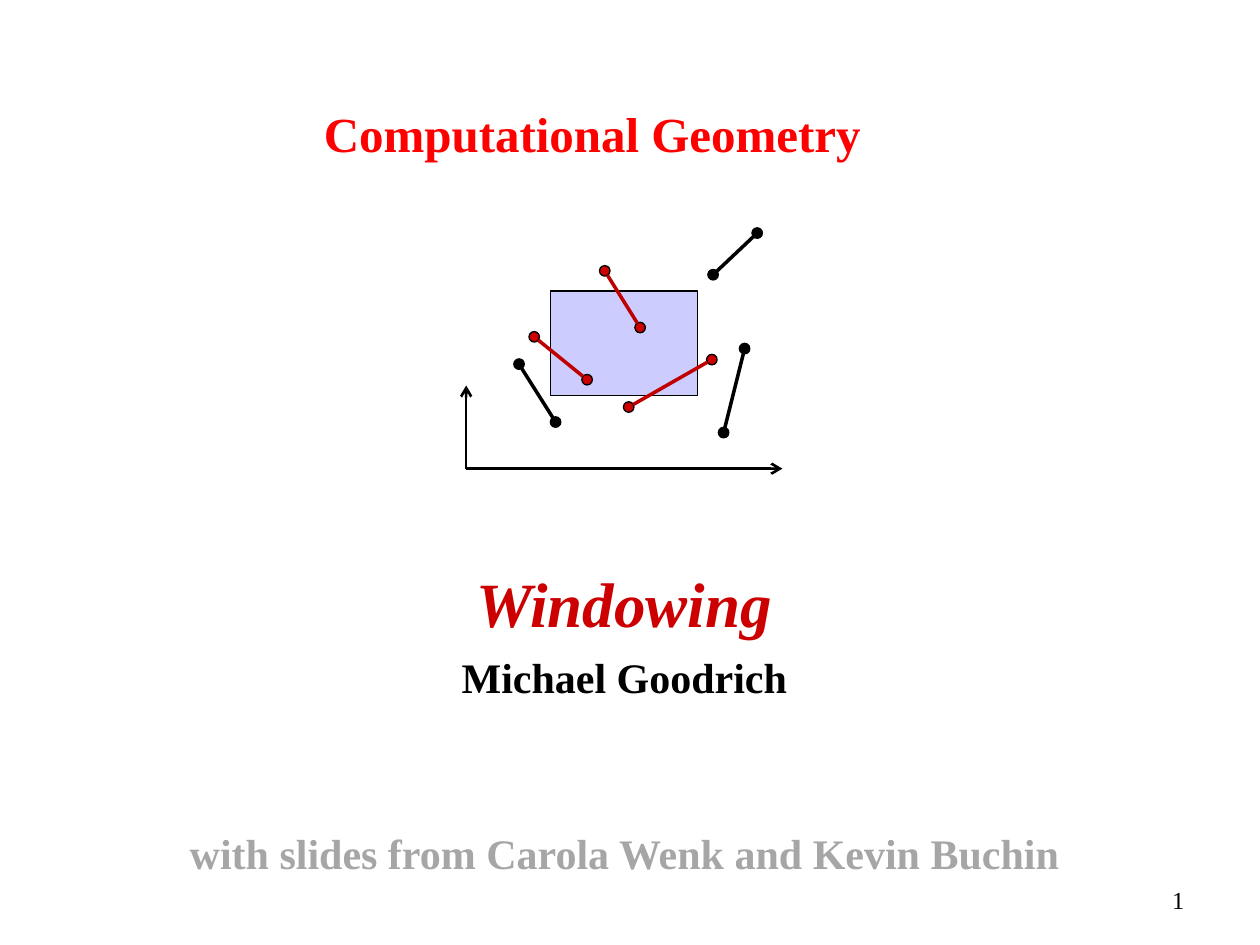
import pptx
import pptx.util
import pptx.dml.color
import pptx.enum.shapes
import pptx.enum.text
import math
from dataclasses import dataclass
from lxml import etree
from pptx.oxml.ns import qn

Pt = pptx.util.Pt
Kind = pptx.enum.shapes.MSO_SHAPE
Align = pptx.enum.text.PP_ALIGN
Anchor = pptx.enum.text.MSO_ANCHOR


@dataclass
class Theme:
    font: str = "Times New Roman"
    title: str = "FF0000"
    topic: str = "CC0000"
    black: str = "000000"
    grey: str = "A6A6A6"
    hit: str = "C00000"
    pane: str = "CCCCFF"
    big: float = 36
    head: float = 28
    body: float = 24
    note: float = 14
    dot: float = 6
    thin: float = 0.75
    axis: float = 1.5
    bold: float = 2


def rgb(code):
    return pptx.dml.color.RGBColor.from_string(code)


class Deck:
    def __init__(self, theme):
        self.theme = theme
        self.show = pptx.Presentation()
        self.show.slide_width, self.show.slide_height = Pt(720), Pt(540)
        self.slide = self.show.slides.add_slide(self.show.slide_layouts[6])

    def text(self, box, rows, align=Align.CENTER, anchor=Anchor.TOP, wrap=True):
        """Each row is (words, size, colour, bold, italic, space before)."""
        shape = self.slide.shapes.add_textbox(*map(Pt, box))
        frame = shape.text_frame
        frame.word_wrap = wrap
        frame.vertical_anchor = anchor
        frame.text = "\n".join(row[0] for row in rows)
        for para, (_, size, color, bold, slant, gap) in zip(frame.paragraphs, rows):
            para.alignment = align
            para.line_spacing = 0.9
            para.space_before = Pt(gap)
            font = para.runs[0].font
            font.name, font.size = self.theme.font, Pt(size)
            font.bold, font.italic = bold, slant
            font.color.rgb = rgb(color)

    def shape(self, kind, box, fill):
        shape = self.slide.shapes.add_shape(kind, *map(Pt, box))
        shape.shadow.inherit = False
        shape.fill.solid()
        shape.fill.fore_color.rgb = rgb(fill)
        shape.line.color.rgb = rgb(self.theme.black)
        shape.line.width = Pt(self.theme.thin)

    def line(self, start, end, color, width, arrow=False):
        kind = pptx.enum.shapes.MSO_CONNECTOR.STRAIGHT
        line = self.slide.shapes.add_connector(kind, *map(Pt, (*start, *end)))
        line.line.color.rgb = rgb(color)
        line.line.width = Pt(width)
        if arrow:
            etree.SubElement(line.line._get_or_add_ln(), qn("a:tailEnd"), type="arrow")
        etree.SubElement(line._element.spPr, qn("a:effectLst"))

    def segment(self, start, end, fill, color):
        """Two dots joined by a line that runs from rim to rim."""
        size = self.theme.dot
        for x, y in (start, end):
            self.shape(Kind.OVAL, (x - size / 2, y - size / 2, size, size), fill)
        part = size / 2 / math.dist(start, end)
        dx, dy = ((b - a) * part for a, b in zip(start, end))
        self.line((start[0] + dx, start[1] + dy), (end[0] - dx, end[1] - dy),
                  color, self.theme.bold)


def main():
    theme = Theme()
    deck = Deck(theme)

    # Titles and slide number
    deck.text((17.3, 38.9, 642.2, 77.8),
              [("Computational Geometry", theme.head, theme.title, True, False, 0)],
              anchor=Anchor.MIDDLE)
    deck.text((23.8, 324, 666, 180), [
        ("Windowing", theme.big, theme.topic, True, True, 3),
        ("Michael Goodrich", theme.body, theme.black, True, False, 9),
        ("with slides from Carola Wenk and Kevin Buchin",
         theme.body, theme.grey, True, False, 74.6),
    ])
    deck.text((653, 504, 31, 24), [("1", theme.note, theme.black, False, False, 0)],
              align=Align.RIGHT, wrap=False)

    # Axes
    base = (266.4, 267.8)
    for tip in ((266.4, 220.3), (447.1, 267.8)):
        deck.line(base, tip, theme.black, theme.axis, arrow=True)

    # Query window
    deck.shape(Kind.RECTANGLE, (314.6, 166.3, 84.2, 59.8), theme.pane)

    # Segments that miss the window
    for start, end in (((296.6, 208.1), (317.5, 241.2)),
                       ((432.7, 133.2), (407.5, 157)),
                       ((425.5, 199.2), (413.5, 247.2))):
        deck.segment(start, end, theme.black, theme.black)

    # Segments that meet the window
    for start, end in (((365.8, 187.2), (345.6, 154.8)),
                       ((335.5, 217), (305.3, 192.5)),
                       ((359.3, 232.6), (406.8, 205.5))):
        deck.segment(start, end, theme.topic, theme.hit)

    deck.show.save("out.pptx")


if __name__ == "__main__":
    main()
